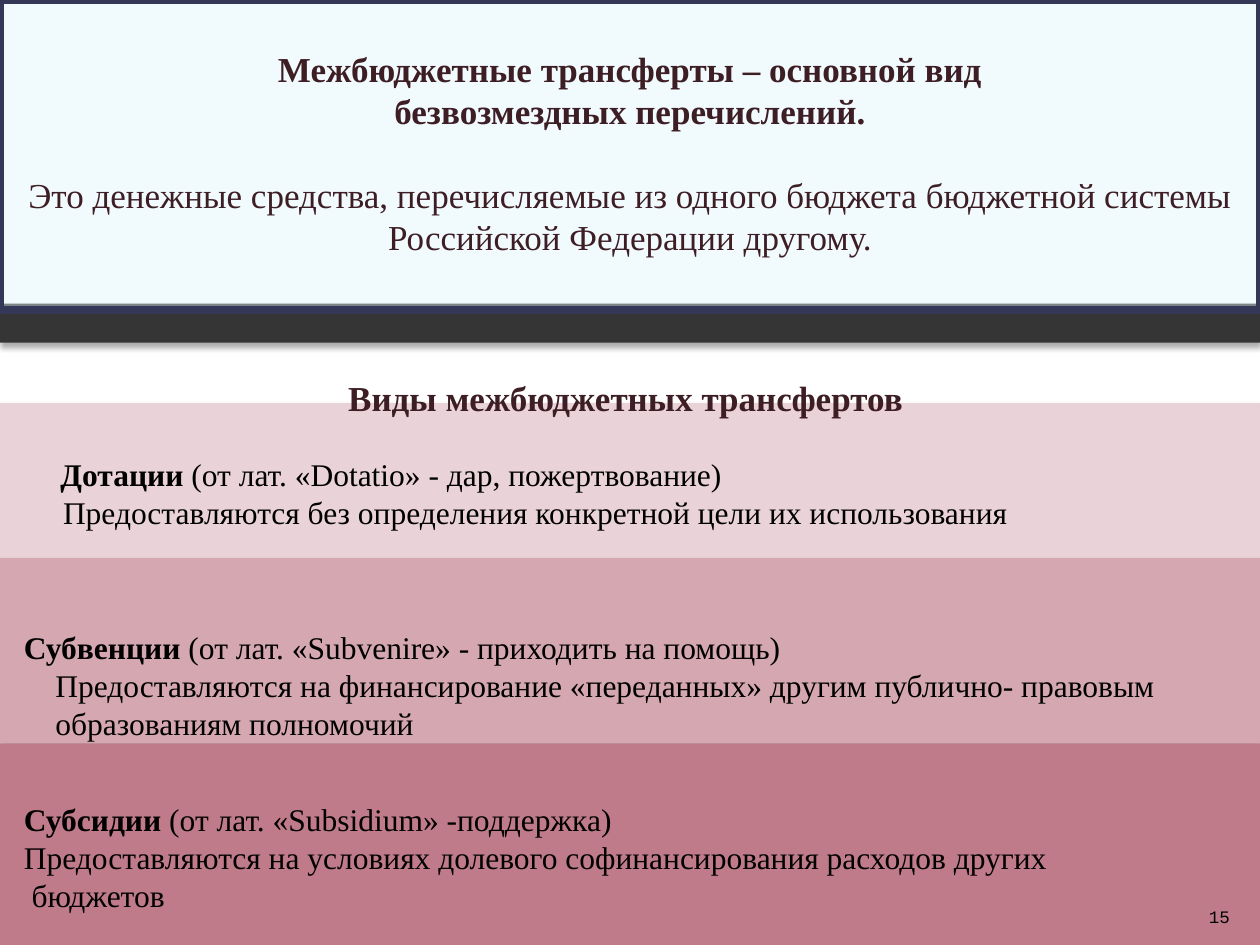
from lxml.etree import SubElement
from pptx import Presentation
from pptx.dml.color import RGBColor
from pptx.enum.shapes import MSO_SHAPE
from pptx.enum.text import MSO_ANCHOR, MSO_AUTO_SIZE, PP_ALIGN
from pptx.oxml.ns import qn
from pptx.util import Inches, Pt

BLACK = RGBColor(0x00, 0x00, 0x00)
PLUM = RGBColor(0x3E, 0x1E, 0x25)
CHARCOAL = RGBColor(0x35, 0x35, 0x35)
NAVY = RGBColor(0x35, 0x37, 0x59)
ICE = RGBColor(0xDE, 0xF5, 0xFA)
PALE_ROSE = RGBColor(0xEA, 0xD3, 0xD8)
ROSE = RGBColor(0xD5, 0xA7, 0xB1)
DEEP_ROSE = RGBColor(0xC0, 0x7B, 0x8A)

HEADING = {"size": Pt(20), "name": "Times New Roman", "color": PLUM}
BODY = {"size": Pt(18), "name": "Times New Roman", "color": BLACK}
NUMBER = {"size": Pt(10), "name": "Courier New", "color": BLACK}
HEADING_LINE = Pt(24)
BODY_LINE = Pt(21.6)

BANDS = [
    (2.41, 2.72, CHARCOAL),
    (3.2, 4.43, PALE_ROSE),
    (4.43, 5.9, ROSE),
    (5.9, 7.5, DEEP_ROSE),
]
HEADER = [
    ("Межбюджетные трансферты – основной вид", True, 0),
    ("безвозмездных перечислений.", True, 0),
    ("Это денежные средства, перечисляемые из одного бюджета бюджетной "
     "системы Российской Федерации другому.", False, 24),
]
KINDS = [
    ("Дотации", " (от лат. «Dotatio» - дар, пожертвование)", 0.48, 20.8),
    ("", "Предоставляются без определения конкретной цели их использования", 0.5, 0),
    ("Субвенции", " (от лат. «Subvenire» - приходить на помощь)", 0.19, 55.5),
    ("", "Предоставляются на финансирование «переданных» другим публично- правовым",
     0.44, 0),
    ("", "образованиям полномочий", 0.44, 0),
    ("Субсидии", " (от лат. «Subsidium» -поддержка)", 0.19, 33.8),
    ("", "Предоставляются на условиях долевого софинансирования расходов других",
     0.19, 0),
    ("", "бюджетов", 0.25, 0),
]


class SlideBuilder:
    def __init__(self, prs):
        self.s = prs.slides.add_slide(prs.slide_layouts[1])
        self.width = prs.slide_width

    def band(self, top, bottom, color):
        sp = self.s.shapes.add_shape(
            MSO_SHAPE.RECTANGLE, 0, Inches(top), self.width, Inches(bottom - top))
        sp.fill.solid()
        sp.fill.fore_color.rgb = color
        sp.line.fill.background()
        sp.shadow.inherit = False
        effects = sp.element.spPr.find(qn("a:effectLst"))
        shadow = SubElement(effects, qn("a:outerShdw"), blurRad=str(Pt(3.5)),
                            dist=str(Pt(2.2)), dir="5400000", rotWithShape="0")
        clr = SubElement(shadow, qn("a:srgbClr"), val=str(BLACK))
        SubElement(clr, qn("a:alpha"), val="32000")

    def frame(self, sp, box, insets, anchor=MSO_ANCHOR.TOP):
        sp.left, sp.top, sp.width, sp.height = (Inches(v) for v in box)
        sp.element.getparent().append(sp.element)
        tf = sp.text_frame
        left, top, right, bottom = (Inches(v) for v in insets)
        settings = {"word_wrap": True, "auto_size": MSO_AUTO_SIZE.NONE,
                    "vertical_anchor": anchor, "margin_left": left,
                    "margin_top": top, "margin_right": right,
                    "margin_bottom": bottom}
        for name, value in settings.items():
            setattr(tf, name, value)
        return tf

    def paragraph(self, tf, runs, style, align, line=None, before=0, indent=0):
        p = tf.paragraphs[0] if not tf.text else tf.add_paragraph()
        pPr = p._p.get_or_add_pPr()
        pPr.set("marL", str(Inches(indent)))
        pPr.set("indent", "0")
        SubElement(pPr, qn("a:buNone"))
        settings = {"alignment": align, "line_spacing": line,
                    "space_before": Pt(before), "space_after": Pt(0)}
        for name, value in settings.items():
            setattr(p, name, value)
        for text, bold in runs:
            if text:
                r = p.add_run()
                r.text = text
                self.font(r.font, style, bold)

    def font(self, font, style, bold):
        for name, value in {**style, "bold": bold}.items():
            if name == "color":
                font.color.rgb = value
            else:
                setattr(font, name, value)

    def body(self):
        tf = self.frame(self.s.placeholders[1], (0, 2.99, 9.74, 4.51), (0, 0, 0, 0))
        self.paragraph(tf, [("Виды межбюджетных трансфертов", True)], HEADING,
                       PP_ALIGN.CENTER, HEADING_LINE, indent=0.19)
        for term, text, indent, before in KINDS:
            self.paragraph(tf, [(term, True), (text, False)], BODY,
                           PP_ALIGN.LEFT, BODY_LINE, before, indent)

    def title(self):
        sp = self.s.shapes.title
        tf = self.frame(sp, (0, 0, 10, 2.46), (0.1, 0.38, 0.1, 0.05))
        sp.fill.solid()
        sp.fill.fore_color.rgb = ICE
        clr = sp.element.spPr.find(qn("a:solidFill")).find(qn("a:srgbClr"))
        SubElement(clr, qn("a:alpha"), val="42000")
        sp.line.color.rgb = NAVY
        sp.line.width = Pt(4.33)
        for text, bold, before in HEADER:
            self.paragraph(tf, [(text, bold)], HEADING, PP_ALIGN.CENTER,
                           HEADING_LINE, before)

    def number(self, text):
        box = (9.46, 7.01, 0.4, 0.4)
        sp = self.s.shapes.add_textbox(*(Inches(v) for v in box))
        tf = self.frame(sp, box, (0.1, 0.05, 0.1, 0.05), MSO_ANCHOR.BOTTOM)
        self.paragraph(tf, [(text, False)], NUMBER, PP_ALIGN.RIGHT)


def main():
    prs = Presentation()
    prs.slide_width, prs.slide_height = Inches(10), Inches(7.5)
    builder = SlideBuilder(prs)
    for band in BANDS:
        builder.band(*band)
    builder.body()
    builder.title()
    builder.number("15")
    prs.save("out.pptx")


if __name__ == "__main__":
    main()
